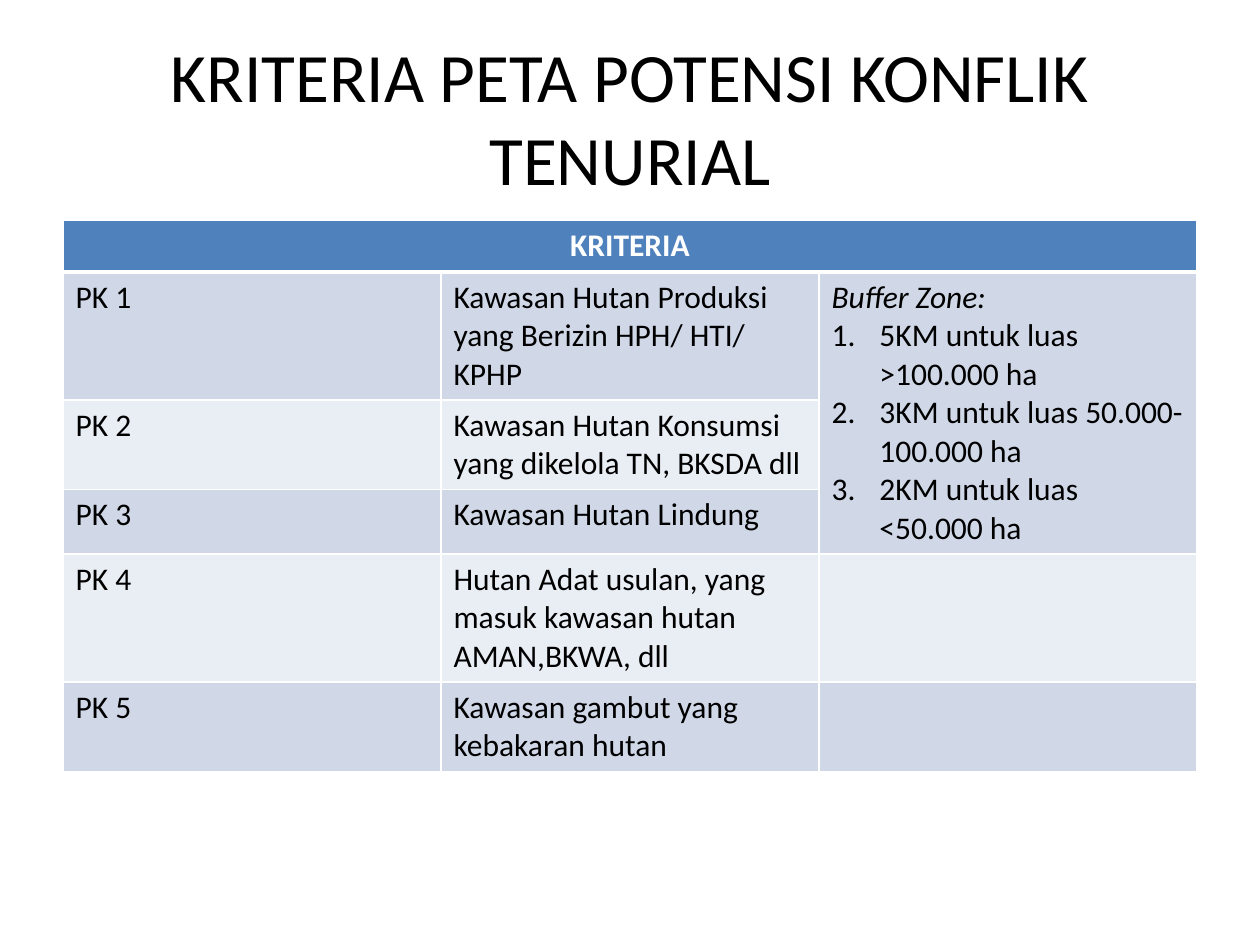
"""Build the slide of criteria for the tenure conflict map."""
import pptx
import pptx.dml.color
import pptx.enum.text
import pptx.oxml.ns
import pptx.util
from lxml import etree

THEME = {
    "font": "Calibri", "title": 39.6, "body": 18,
    "ink": "000000", "light": "FFFFFF", "head": "4F81BD",
    "bands": ("D0D8E8", "E9EDF4"),
}
ROWS = [
    ("PK 1", "Kawasan Hutan Produksi yang Berizin HPH/ HTI/ KPHP"),
    ("PK 2", "Kawasan Hutan Konsumsi yang dikelola TN, BKSDA dll"),
    ("PK 3", "Kawasan Hutan Lindung"),
    ("PK 4", "Hutan Adat usulan, yang masuk kawasan hutan AMAN,BKWA, dll"),
    ("PK 5", "Kawasan gambut yang kebakaran hutan"),
]
ZONES = ["5KM untuk luas >100.000 ha", "3KM untuk luas 50.000-100.000 ha",
         "2KM untuk luas <50.000 ha"]
HEIGHTS = [0.41, 1.01, 0.71, 0.51, 1.01, 0.71]


def style(para, size, color, bold=False):
    """Set the font of a paragraph."""
    para.font.name = THEME["font"]
    para.font.size = pptx.util.Pt(size)
    para.font.bold = bold
    para.font.color.rgb = pptx.dml.color.RGBColor.from_string(color)


def edge(cell, side, width):
    """Draw one border of a cell."""
    line = etree.SubElement(cell._tc.get_or_add_tcPr(), pptx.oxml.ns.qn(f"a:ln{side}"),
                            w=str(pptx.util.Pt(width)))
    fill = etree.SubElement(line, pptx.oxml.ns.qn("a:solidFill"))
    etree.SubElement(fill, pptx.oxml.ns.qn("a:srgbClr"), val=THEME["light"])


deck = pptx.Presentation()
deck.slide_width = wide = pptx.util.Inches(10)
deck.slide_height = high = pptx.util.Inches(7.5)
slide = deck.slides.add_slide(deck.slide_layouts[5])
left, span = int(wide * 0.05), int(wide * 0.9)
center = pptx.enum.text.PP_ALIGN.CENTER

title = slide.shapes.title
title.left, title.top = left, int(high * 0.04)
title.width, title.height = span, pptx.util.Inches(1.25)
title.text_frame.text = "KRITERIA PETA POTENSI KONFLIK TENURIAL"
title.text_frame.word_wrap = True
title.text_frame.vertical_anchor = pptx.enum.text.MSO_ANCHOR.MIDDLE
head = title.text_frame.paragraphs[0]
head.alignment = center
style(head, THEME["title"], THEME["ink"])

table = slide.shapes.add_table(
    len(HEIGHTS), 3, left, pptx.util.Inches(1.75), span,
    pptx.util.Inches(sum(HEIGHTS))).table
for row, height in zip(table.rows, HEIGHTS):
    row.height = pptx.util.Inches(height)
table.cell(0, 0).merge(table.cell(0, 2))
table.cell(1, 2).merge(table.cell(3, 2))

table.cell(0, 0).text = "KRITERIA"
for at, texts in enumerate(ROWS, 1):
    for col, text in enumerate(texts):
        table.cell(at, col).text = text
table.cell(1, 2).text = "\n".join(["Buffer Zone:", *ZONES])

for at, row in enumerate(table.rows):
    shade = THEME["bands"][(at - 1) % 2] if at else THEME["head"]
    color = THEME["ink"] if at else THEME["light"]
    for cell in row.cells:
        for side in "LRTB":
            thick = (at, side) in ((0, "B"), (1, "T"))
            edge(cell, side, 3 if thick else 1)
        cell.fill.solid()
        cell.fill.fore_color.rgb = pptx.dml.color.RGBColor.from_string(shade)
        for para in cell.text_frame.paragraphs:
            style(para, THEME["body"], color, bold=at == 0)

table.cell(0, 0).text_frame.paragraphs[0].alignment = center
label, *items = table.cell(1, 2).text_frame.paragraphs
label.font.italic = True
indent = pptx.util.Inches(0.38)
for item in items:
    props = item._p.get_or_add_pPr()
    props.set("marL", str(indent))
    props.set("indent", str(-indent))
    mark = etree.Element(pptx.oxml.ns.qn("a:buAutoNum"), type="arabicPeriod")
    props.insert(0, mark)

deck.save("out.pptx")
